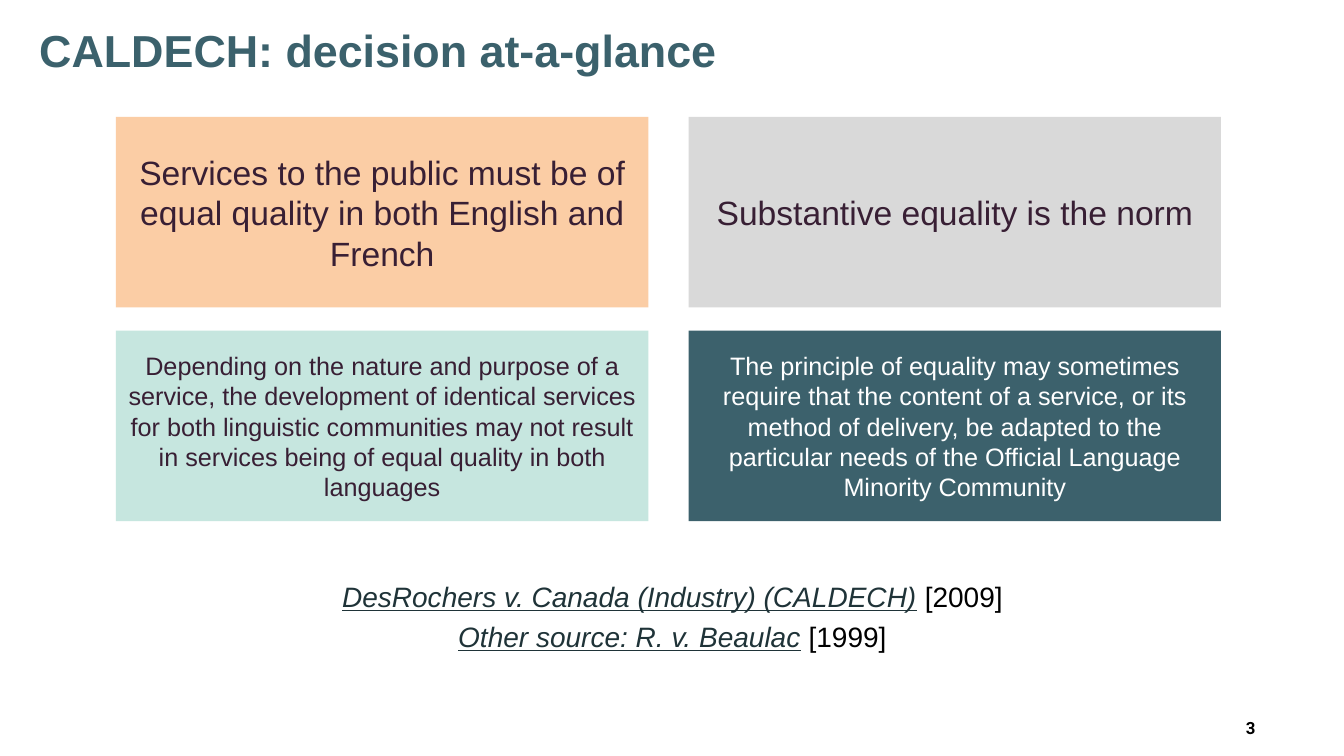
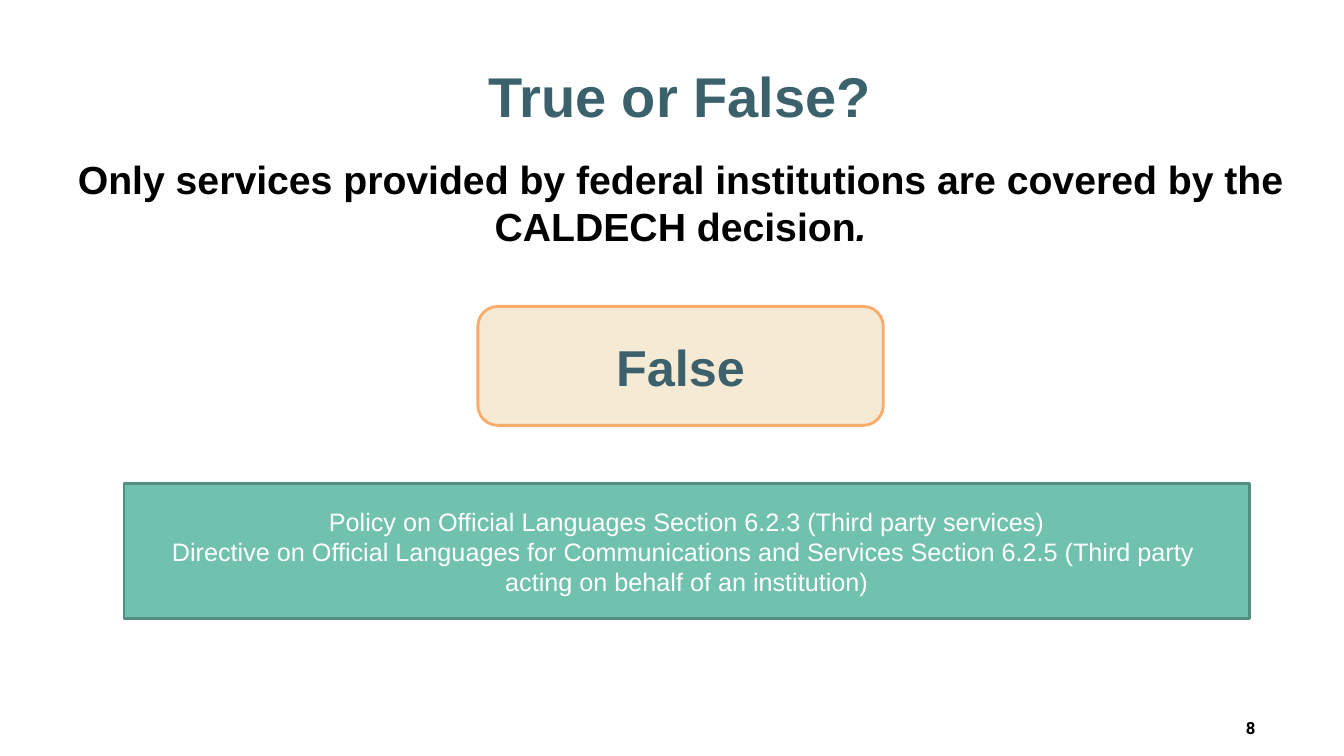
from dataclasses import dataclass, replace

from pptx import Presentation
from pptx.dml.color import RGBColor
from pptx.enum.shapes import MSO_SHAPE
from pptx.enum.text import MSO_ANCHOR, PP_ALIGN
from pptx.util import Inches, Pt

RECT, ROUND = MSO_SHAPE.RECTANGLE, MSO_SHAPE.ROUNDED_RECTANGLE
TOP, MIDDLE = MSO_ANCHOR.TOP, MSO_ANCHOR.MIDDLE
LEFT, CENTER, RIGHT = PP_ALIGN.LEFT, PP_ALIGN.CENTER, PP_ALIGN.RIGHT
WIDE, HIGH = Inches(13.33), Inches(7.5)


@dataclass(frozen=True)
class Theme:
    font: str = "Arial"
    page_font: str = "Roboto"
    teal: str = "3B616C"
    slate: str = "3C616C"
    plum: str = "381F34"
    link: str = "1F3338"
    black: str = "000000"
    white: str = "FFFFFF"
    peach: str = "FBCDA5"
    mint: str = "C6E6DF"
    gray: str = "D9D9D9"
    cream: str = "F5EAD3"
    orange: str = "F9AB69"
    green: str = "70C1AE"
    moss: str = "538F81"
    page: int = 12
    body: int = 18
    cite: int = 20
    lead: int = 24
    claim: int = 28
    head: int = 32
    answer: int = 36
    banner: int = 40


THEME = Theme()


@dataclass(frozen=True)
class Box:
    """A frame in percent of the slide's width and height."""
    left: float
    top: float
    wide: float
    high: float

    def place(self) -> tuple[int, int, int, int]:
        return (int(WIDE * self.left / 100), int(HIGH * self.top / 100),
                int(WIDE * self.wide / 100), int(HIGH * self.high / 100))


@dataclass(frozen=True)
class Style:
    size: int
    color: str
    bold: bool = False
    slant: bool = False
    under: bool = False
    font: str = THEME.font


@dataclass(frozen=True)
class Run:
    text: str
    style: Style


@dataclass(frozen=True)
class Card:
    col: int
    row: int
    text: str
    size: int
    fill: str
    color: str = THEME.plum


Lines = list[list[Run]]

PAGE = Box(84.85, 92.53, 9.3, 7.47)
HEAD = Box(2.18, 2.27, 80.95, 8.53)
CITES = Box(22.28, 76, 55.5, 16.53)
BANNER = Box(3.9, 8.8, 93.32, 7.6)
CLAIM = Box(3.98, 19.87, 93.32, 69.33)
ANSWER = Box(35.56, 40.53, 30.16, 15.73)
POLICY = Box(9.23, 64, 83.72, 17.87)
FIRST = Box(8.63, 15.47, 39.61, 25.2)
GAP_X, GAP_Y = 3, 3.07

CARDS = [
    Card(0, 0, "Services to the public must be of equal quality in both English and French",
         THEME.lead, THEME.peach),
    Card(0, 1, "Depending on the nature and purpose of a service, the development of "
         "identical services for both linguistic communities may not result in services "
         "being of equal quality in both languages", THEME.body, THEME.mint),
    Card(1, 0, "Substantive equality is the norm", THEME.lead, THEME.gray),
    Card(1, 1, "The principle of equality may sometimes require that the content of a "
         "service, or its method of delivery, be adapted to the particular needs of the "
         "Official Language Minority Community", THEME.body, THEME.slate, THEME.white),
]
CASES = [("DesRochers v. Canada (Industry) (CALDECH)", " [2009]"),
         ("Other source: R. v. Beaulac", " [1999]")]


def write(frame, lines: Lines, align=CENTER, anchor=MIDDLE, gap: float = 0) -> None:
    """Fill a text frame; gap is the space in points between paragraphs."""
    frame.word_wrap = True
    frame.vertical_anchor = anchor
    for index, line in enumerate(lines):
        para = frame.paragraphs[0] if index == 0 else frame.add_paragraph()
        para.alignment = align
        if index:
            para.space_before = Pt(gap)
        for item in line:
            for part, text in enumerate(item.text.split("\n")):
                if part:
                    para.add_line_break()
                run = para.add_run()
                run.text = text
                font, style = run.font, item.style
                font.name, font.size = style.font, Pt(style.size)
                font.bold, font.italic = style.bold, style.slant
                font.underline = style.under
                font.color.rgb = RGBColor.from_string(style.color)


def label(slide, box: Box, lines: Lines, align=CENTER, anchor=MIDDLE, gap: float = 0) -> None:
    write(slide.shapes.add_textbox(*box.place()).text_frame, lines, align, anchor, gap)


def panel(slide, box: Box, lines: Lines, fill: str, edge: str = "", kind=RECT) -> None:
    shape = slide.shapes.add_shape(kind, *box.place())
    shape.shadow.inherit = False
    shape.fill.solid()
    shape.fill.fore_color.rgb = RGBColor.from_string(fill)
    if edge:
        shape.line.color.rgb = RGBColor.from_string(edge)
        shape.line.width = Pt(2)
    else:
        shape.line.fill.background()
    write(shape.text_frame, lines)


def start(deck, number: int, title: str, box: Box, size: int, align):
    """Add a slide with its title and page number."""
    slide = deck.slides.add_slide(deck.slide_layouts[6])
    label(slide, box, [[Run(title, Style(size, THEME.teal, bold=True))]], align)
    mark = Style(THEME.page, THEME.black, bold=True, font=THEME.page_font)
    label(slide, PAGE, [[Run(str(number), mark)]], RIGHT)
    return slide


def glance(deck) -> None:
    slide = start(deck, 3, "CALDECH: decision at-a-glance", HEAD, THEME.head, LEFT)
    for card in CARDS:
        box = replace(FIRST, left=FIRST.left + card.col * (FIRST.wide + GAP_X),
                      top=FIRST.top + card.row * (FIRST.high + GAP_Y))
        panel(slide, box, [[Run(card.text, Style(card.size, card.color))]], card.fill)
    name = Style(THEME.cite, THEME.link, slant=True, under=True)
    year = Style(THEME.cite, THEME.black)
    label(slide, CITES, [[Run(case, name), Run(date, year)] for case, date in CASES],
          anchor=TOP, gap=4.5)


def quiz(deck) -> None:
    slide = start(deck, 8, "True or False?", BANNER, THEME.banner, CENTER)
    bold = Style(THEME.claim, THEME.black, bold=True)
    label(slide, CLAIM, [[
        Run("Only services provided by federal institutions are covered by the "
            "CALDECH decision", bold),
        Run(".", replace(bold, slant=True))]], anchor=TOP)
    panel(slide, ANSWER, [[Run("False", Style(THEME.answer, THEME.slate, bold=True))]],
          THEME.cream, THEME.orange, ROUND)
    plain = Style(THEME.body, THEME.white)
    panel(slide, POLICY, [
        [Run("Policy on Official Languages Section 6.2.3 (Third party services)", plain)],
        [Run("Directive on Official Languages for Communications and Services "
             "Section 6.2.5 (Third party \nacting on behalf of an institution)", plain)],
    ], THEME.green, THEME.moss)


def main() -> None:
    deck = Presentation()
    deck.slide_width, deck.slide_height = WIDE, HIGH
    glance(deck)
    quiz(deck)
    deck.save("out.pptx")


if __name__ == "__main__":
    main()
